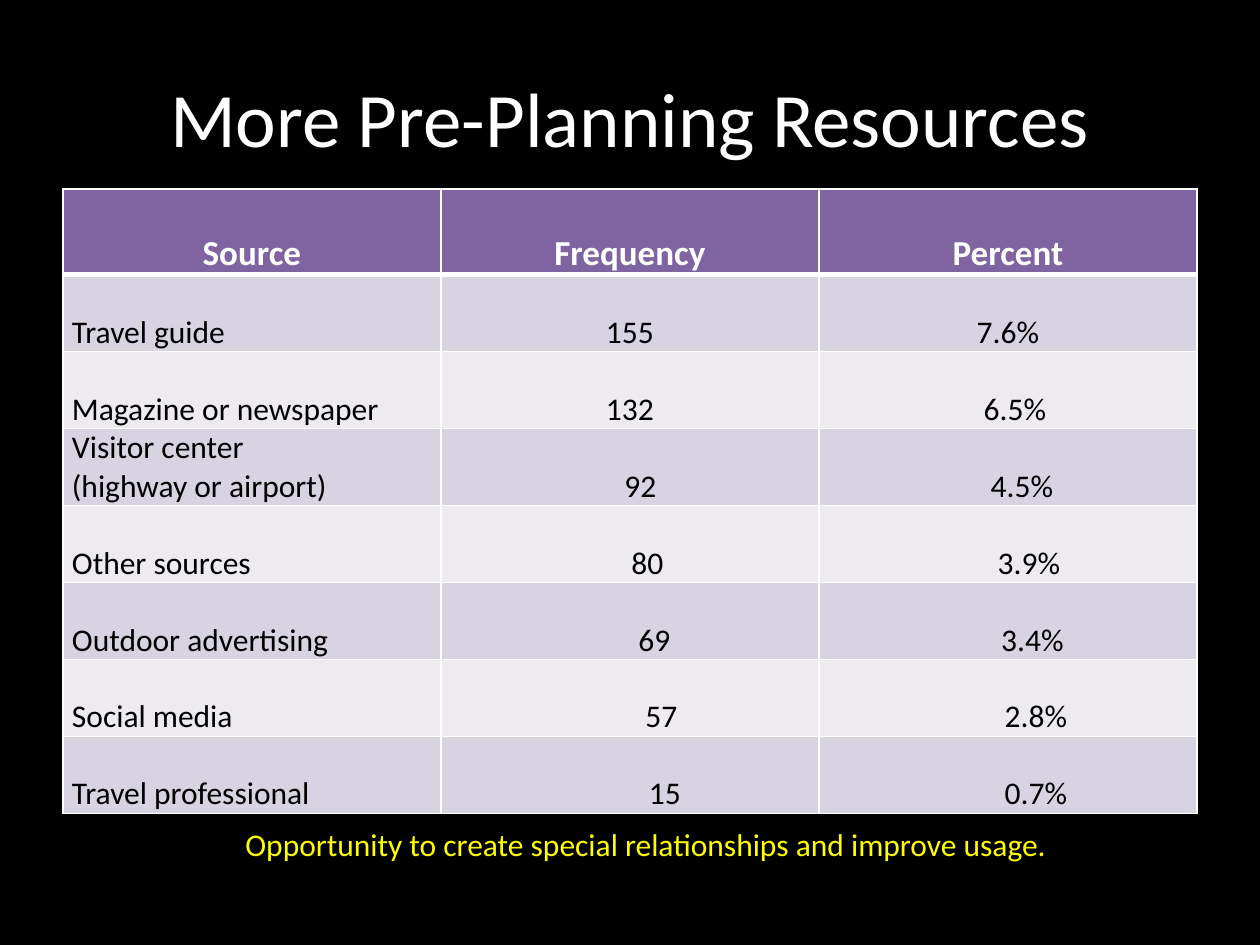
from pptx import Presentation
from pptx import util as u
from pptx.dml.color import RGBColor
from pptx.enum import text
from pptx.oxml import parse_xml
from pptx.oxml.ns import nsdecls

PX = 914400 // 126
BLACK = RGBColor(0x00, 0x00, 0x00)
WHITE = RGBColor(0xFF, 0xFF, 0xFF)
YELLOW = RGBColor(0xFF, 0xFF, 0x00)
PURPLE = RGBColor(0x80, 0x64, 0xA2)
BANDS = RGBColor(0xD8, 0xD3, 0xE0), RGBColor(0xED, 0xEA, 0xF0)
LEFT, CENTER = text.PP_ALIGN.LEFT, text.PP_ALIGN.CENTER
SPACE = 7  # px that one indent step adds

HEAD = ["Source", "Frequency", "Percent"]
# source, frequency, its indent steps, percent, its indent steps
ROWS = [
    ("Travel guide", "155", 0, "7.6%", 0),
    ("Magazine or newspaper", "132", 0, "6.5%", 2),
    ("Visitor center\n(highway or airport)", "92", 3, "4.5%", 4),
    ("Other sources", "80", 5, "3.9%", 6),
    ("Outdoor advertising", "69", 7, "3.4%", 7),
    ("Social media", "57", 9, "2.8%", 8),
    ("Travel professional", "15", 10, "0.7%", 8),
]


class Deck:
    def __init__(self):
        self.prs = Presentation()
        self.prs.slide_width, self.prs.slide_height = u.Inches(10), u.Inches(7.5)
        self.font = "Calibri"
        self.slide = None

    def add(self, color):
        self.slide = self.prs.slides.add_slide(self.prs.slide_layouts[5])
        fill = self.slide.background.fill
        fill.solid()
        fill.fore_color.rgb = color

    def style(self, frame, size, color, align, bold=False):
        for par in frame.paragraphs:
            par.alignment = align
            for run in par.runs:
                font = run.font
                font.name, font.size, font.bold = self.font, u.Pt(size), bold
                font.color.rgb = color

    def title(self, words, box, size, color):
        shape = self.slide.shapes.title
        shape.left, shape.top, shape.width, shape.height = (n * PX for n in box)
        frame = shape.text_frame
        frame.text = words
        frame.vertical_anchor = text.MSO_ANCHOR.MIDDLE
        self.style(frame, size, color, CENTER)

    def note(self, words, box, size, color):
        frame = self.slide.shapes.add_textbox(*(n * PX for n in box)).text_frame
        frame.word_wrap = True
        frame.auto_size = text.MSO_AUTO_SIZE.SHAPE_TO_FIT_TEXT
        frame.text = words
        self.style(frame, size, color, CENTER)

    def table(self, count, box, high):
        """Add an unstyled table; the first row is high px, the rest share."""
        grid = self.slide.shapes.add_table(count, 3, *(n * PX for n in box)).table
        grid.first_row = grid.horz_banding = False
        rest = (box[3] - high) // (count - 1)
        for i, row in enumerate(grid.rows):
            row.height = (rest if i else high) * PX
        return grid

    def cell(self, cell, words, fill, size, color, align,
             bold=False, steps=0, top=1, bottom=1):
        """Fill one cell; top and bottom are border widths in points."""
        cell.margin_left = cell.margin_right = 9 * PX
        cell.margin_top = cell.margin_bottom = 0
        cell.vertical_anchor = text.MSO_ANCHOR.BOTTOM
        for side, width in zip("LRTB", (1, 1, top, bottom)):
            cell._tc.tcPr.append(parse_xml(
                f'<a:ln{side} {nsdecls("a")} w="{u.Pt(width)}"><a:solidFill>'
                f'<a:srgbClr val="{WHITE}"/></a:solidFill></a:ln{side}>'))
        cell.fill.solid()
        cell.fill.fore_color.rgb = fill
        frame = cell.text_frame
        frame.text = words
        self.style(frame, size, color, align, bold)
        pars = frame.paragraphs
        if len(pars) == 1:
            pars[0].line_spacing = 2.0
        if steps:
            pars[0]._p.get_or_add_pPr().set("marL", str(steps * SPACE * PX))


def main():
    deck = Deck()
    deck.add(BLACK)
    deck.title("More Pre-Planning Resources", (63, 38, 1134, 157), 44, WHITE)
    grid = deck.table(len(ROWS) + 1, (63, 189, 1134, 583), 79)
    for col, words in enumerate(HEAD):
        deck.cell(grid.cell(0, col), words, PURPLE, 20, WHITE, CENTER,
                  bold=True, bottom=3)
    for i, (name, freq, shift, share, move) in enumerate(ROWS):
        items = (name, LEFT, 0), (freq, CENTER, shift), (share, CENTER, move)
        for col, (words, align, steps) in enumerate(items):
            deck.cell(grid.cell(i + 1, col), words, BANDS[i % 2], 18, BLACK,
                      align, steps=steps, top=1 if i else 3)
    deck.note("Opportunity to create special relationships and improve usage.",
              (126, 819, 1040, 50), 18, YELLOW)
    deck.prs.save("out.pptx")


if __name__ == "__main__":
    main()
